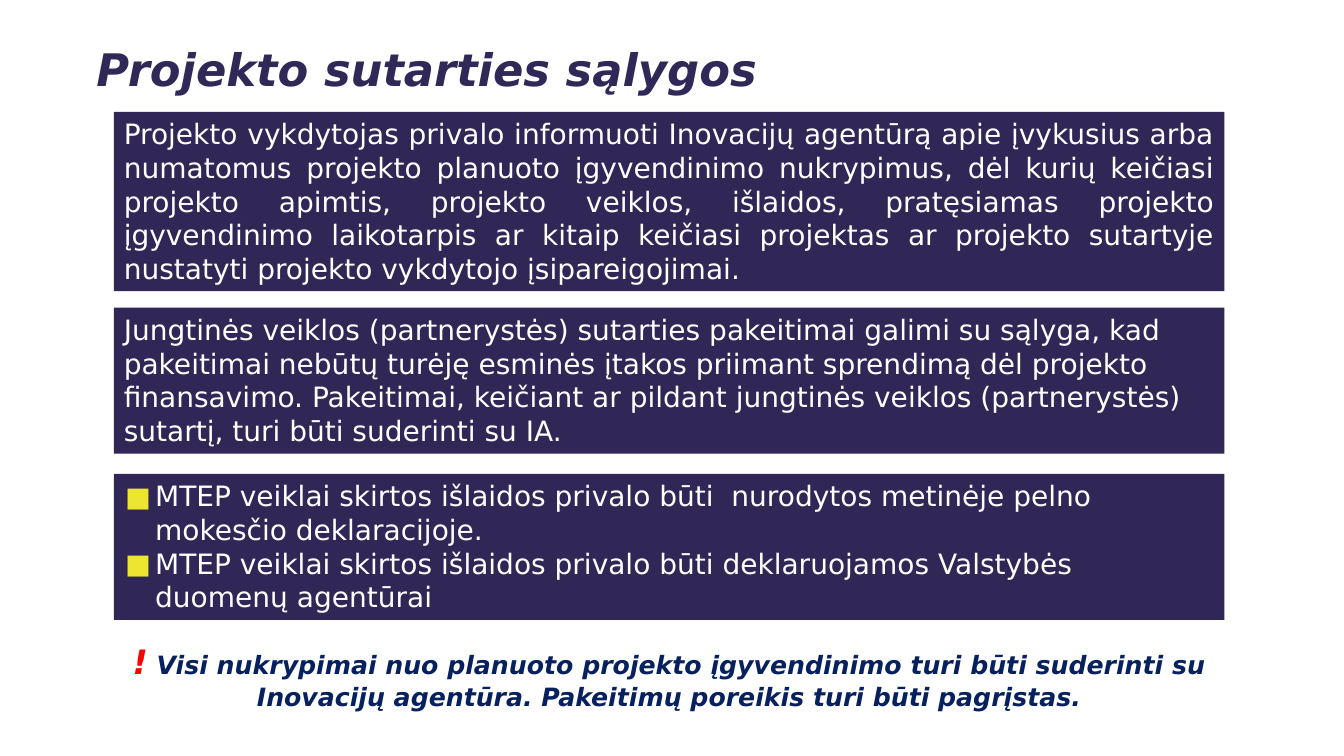
from lxml.etree import SubElement
from pptx import Presentation
from pptx.dml.color import RGBColor
from pptx.enum.shapes import MSO_SHAPE
from pptx.enum.text import MSO_ANCHOR, PP_ALIGN
from pptx.oxml.ns import qn
from pptx.util import Cm, Pt

FONT = "DejaVu Sans"
PURPLE, WHITE, YELLOW = "302757", "FFFFFF", "EDE630"
TITLE_COLOR, RED, NAVY = "302957", "FF0000", "07215E"

TITLE = "Projekto sutarties sąlygos"
# top and height in cm, alignment, bulleted, paragraphs
PANELS = [
    (2.82, 4.52, PP_ALIGN.JUSTIFY, False, [
        "Projekto vykdytojas privalo informuoti Inovacijų agentūrą apie įvykusius arba "
        "numatomus projekto planuoto įgyvendinimo nukrypimus, dėl kurių keičiasi projekto "
        "apimtis, projekto veiklos, išlaidos, pratęsiamas projekto įgyvendinimo laikotarpis "
        "ar kitaip keičiasi projektas ar projekto sutartyje nustatyti projekto vykdytojo "
        "įsipareigojimai."]),
    (7.75, 3.68, PP_ALIGN.LEFT, False, [
        "Jungtinės veiklos (partnerystės) sutarties pakeitimai galimi su sąlyga, kad "
        "pakeitimai nebūtų turėję esminės įtakos priimant sprendimą dėl projekto "
        "finansavimo. Pakeitimai, keičiant ar pildant jungtinės veiklos (partnerystės) "
        "sutartį, turi būti suderinti su IA."]),
    (11.94, 3.68, PP_ALIGN.LEFT, True, [
        "MTEP veiklai skirtos išlaidos privalo būti  nurodytos metinėje pelno mokesčio "
        "deklaracijoje.",
        "MTEP veiklai skirtos išlaidos privalo būti deklaruojamos Valstybės duomenų "
        "agentūrai"]),
]
WARNING = [
    ("!", 24, RED),
    (" ", 18, RED),
    ("Visi nukrypimai nuo planuoto projekto įgyvendinimo turi būti suderinti su "
     "Inovacijų agentūra. Pakeitimų poreikis turi būti pagrįstas.", 18, NAVY),
]
PANEL_LEFT, PANEL_WIDTH = 2.87, 27.99
BULLET_INDENT = 0.79


def color(hex_code):
    return RGBColor.from_string(hex_code)


def add_span(para, text, size=20, fill=WHITE, strong=False):
    """Add a run; strong means bold italic."""
    span = para.add_run()
    span.text = text
    font = span.font
    font.name, font.size = FONT, Pt(size)
    font.bold = font.italic = strong
    font.color.rgb = color(fill)


def add_bullet(para):
    properties = para._p.get_or_add_pPr()
    properties.set("marL", str(Cm(BULLET_INDENT)))
    properties.set("indent", str(-Cm(BULLET_INDENT)))
    bullet_color = SubElement(properties, qn("a:buClr"))
    SubElement(bullet_color, qn("a:srgbClr"), val=YELLOW)
    SubElement(properties, qn("a:buSzPct"), val="150000")
    SubElement(properties, qn("a:buFont"), typeface=FONT)
    SubElement(properties, qn("a:buChar"), char="▪")


def add_panel(page, top, height, alignment, bulleted, paragraphs):
    panel = page.shapes.add_shape(MSO_SHAPE.RECTANGLE, Cm(PANEL_LEFT), Cm(top),
                                  Cm(PANEL_WIDTH), Cm(height))
    panel.shadow.inherit = False
    panel.fill.solid()
    panel.fill.fore_color.rgb = color(PURPLE)
    panel.line.fill.background()
    frame = panel.text_frame
    frame.word_wrap = True
    frame.vertical_anchor = MSO_ANCHOR.TOP
    for index, text in enumerate(paragraphs):
        para = frame.add_paragraph() if index else frame.paragraphs[0]
        para.alignment = alignment
        if bulleted:
            add_bullet(para)
        add_span(para, text)


def add_heading(page, left, top, width, height, alignment, spans):
    box = page.shapes.add_textbox(Cm(left), Cm(top), Cm(width), Cm(height))
    frame = box.text_frame
    frame.word_wrap = True
    frame.vertical_anchor = MSO_ANCHOR.MIDDLE
    para = frame.paragraphs[0]
    para.alignment = alignment
    for text, size, fill in spans:
        add_span(para, text, size=size, fill=fill, strong=True)


def main():
    deck = Presentation()
    deck.slide_width, deck.slide_height = Cm(33.87), Cm(19.05)
    page = deck.slides.add_slide(deck.slide_layouts[6])
    add_heading(page, 2.18, 0.51, 30.12, 2.44, PP_ALIGN.LEFT, [(TITLE, 32, TITLE_COLOR)])
    for panel in PANELS:
        add_panel(page, *panel)
    add_heading(page, 1.42, 16.15, 30.89, 1.8, PP_ALIGN.CENTER, WARNING)
    deck.save("out.pptx")


if __name__ == "__main__":
    main()
